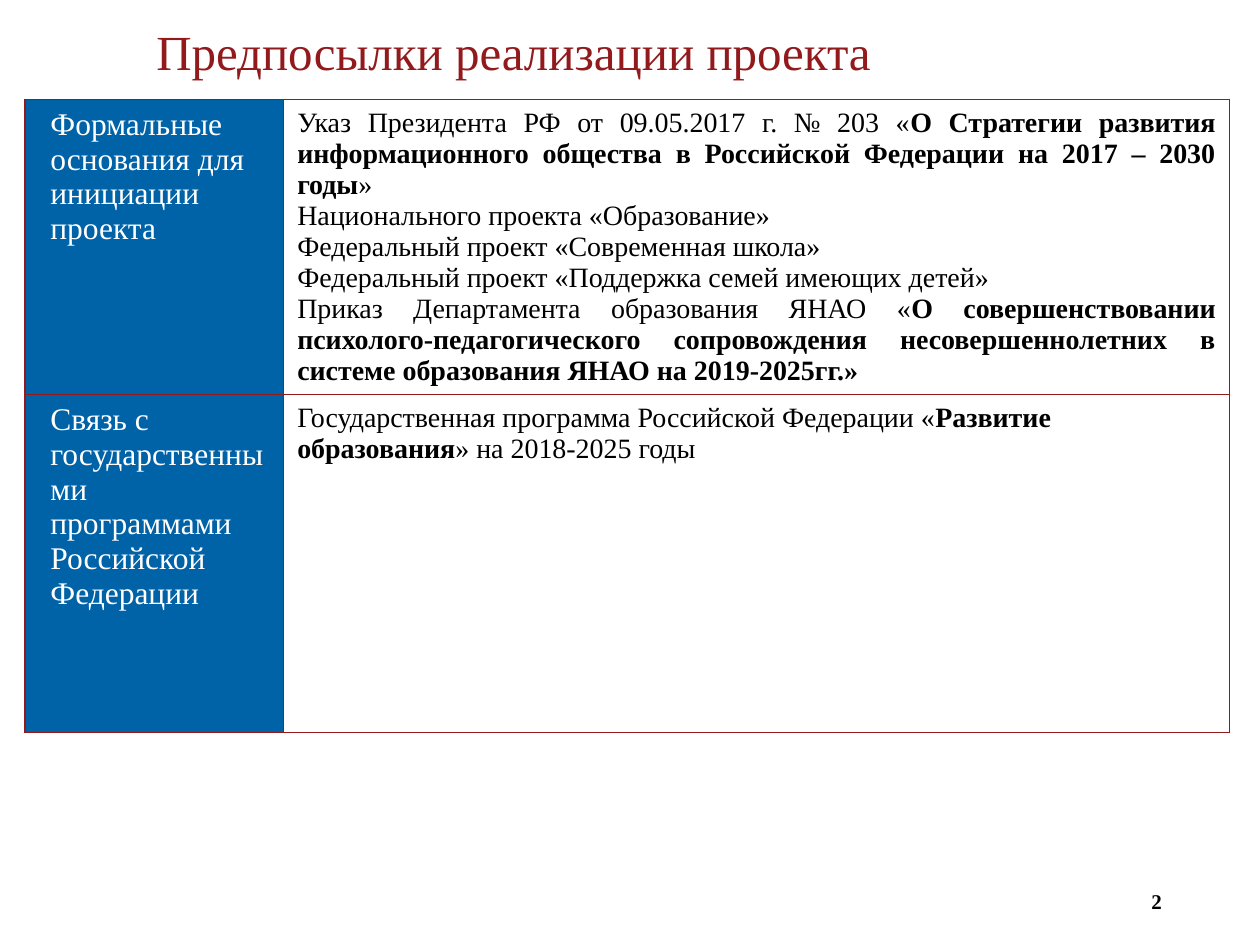
"""Build the slide on the grounds for the project."""
from lxml import etree
from pptx import Presentation
from pptx.dml.color import RGBColor
from pptx.enum import text
from pptx.oxml import ns
from pptx.util import Inches, Pt

COLORS = {"red": "921A1D", "blue": "0062A7", "white": "FFFFFF", "black": "000000"}
FONT = "Times New Roman"
TITLE = "Предпосылки реализации проекта"
PAGE_NUMBER = "2"
COLUMN_WIDTHS = (2.05, 7.51)
ROW_HEIGHTS = (2.17, 2.68)
# Each body paragraph alternates regular and bold runs, starting with regular.
ROWS = [
    {
        "label": "Формальные основания для инициации проекта",
        "align": text.PP_ALIGN.JUSTIFY,
        "body": [
            ("Указ Президента РФ от 09.05.2017 г. № 203 «",
             "О Стратегии развития информационного общества в Российской Федерации на 2017 – 2030 годы",
             "» "),
            ("Национального проекта «Образование» ",),
            ("Федеральный проект «Современная школа»",),
            ("Федеральный проект «Поддержка семей имеющих детей»",),
            ("Приказ Департамента образования ЯНАО «",
             "О совершенствовании психолого-педагогического сопровождения несовершеннолетних "
             "в системе образования ЯНАО на 2019-2025гг.»"),
        ],
    },
    {
        "label": "Связь с государственными программами Российской Федерации",
        "align": text.PP_ALIGN.LEFT,
        "body": [
            ("Государственная программа Российской Федерации «",
             "Развитие образования",
             "» на 2018-2025 годы"),
        ],
    },
]


def add_run(paragraph, content, size=16, color="black", bold=False):
    run = paragraph.add_run()
    run.text = content
    run.font.name = FONT
    run.font.size = Pt(size)
    run.font.bold = bold
    run.font.color.rgb = RGBColor.from_string(COLORS[color])


def set_borders(cell, color="red", width=1):
    properties = cell._tc.get_or_add_tcPr()
    for index, side in enumerate(("lnL", "lnR", "lnT", "lnB")):
        line = etree.Element(ns.qn(f"a:{side}"), w=str(Pt(width)))
        fill = etree.SubElement(line, ns.qn("a:solidFill"))
        etree.SubElement(fill, ns.qn("a:srgbClr"), val=COLORS[color])
        properties.insert(index, line)


def format_cell(cell, fill, left=0.11):
    cell.margin_left, cell.margin_right = Inches(left), Inches(0.11)
    cell.margin_top = cell.margin_bottom = Inches(0.06)
    cell.fill.solid()
    cell.fill.fore_color.rgb = RGBColor.from_string(COLORS[fill])
    set_borders(cell)


def add_title(slide):
    title = slide.shapes.title
    title.left, title.top, title.width, title.height = map(Inches, (0.85, 0.15, 7.62, 0.54))
    frame = title.text_frame
    frame.auto_size = text.MSO_AUTO_SIZE.NONE
    frame.vertical_anchor = text.MSO_ANCHOR.BOTTOM
    frame.margin_left = Inches(0.39)
    paragraph = frame.paragraphs[0]
    paragraph.alignment = text.PP_ALIGN.LEFT
    paragraph.line_spacing = 0.9
    add_run(paragraph, TITLE, size=28, color="red")


def add_grounds_table(slide):
    frame = slide.shapes.add_table(len(ROWS), 2, Inches(0.2), Inches(0.79),
                                   Inches(sum(COLUMN_WIDTHS)), Inches(sum(ROW_HEIGHTS)))
    table = frame.table
    for column, width in zip(table.columns, COLUMN_WIDTHS):
        column.width = Inches(width)
    for row, height, content in zip(table.rows, ROW_HEIGHTS, ROWS):
        row.height = Inches(height)
        label, body = row.cells
        format_cell(label, "blue", left=0.2)
        format_cell(body, "white")
        paragraph = label.text_frame.paragraphs[0]
        paragraph.space_before = Pt(6)
        add_run(paragraph, content["label"], size=18, color="white")
        for index, parts in enumerate(content["body"]):
            body_frame = body.text_frame
            paragraph = body_frame.add_paragraph() if index else body_frame.paragraphs[0]
            paragraph.alignment = content["align"]
            for position, part in enumerate(parts):
                add_run(paragraph, part, bold=position % 2 == 1)


def add_page_number(slide):
    box = slide.shapes.add_textbox(*map(Inches, (7.07, 6.95, 2.25, 0.4)))
    box.text_frame.word_wrap = True
    box.text_frame.vertical_anchor = text.MSO_ANCHOR.MIDDLE
    paragraph = box.text_frame.paragraphs[0]
    paragraph.alignment = text.PP_ALIGN.RIGHT
    add_run(paragraph, PAGE_NUMBER, size=12, bold=True)


def main():
    presentation = Presentation()
    presentation.slide_width, presentation.slide_height = Inches(10), Inches(7.5)
    slide = presentation.slides.add_slide(presentation.slide_layouts[5])
    add_title(slide)
    add_grounds_table(slide)
    add_page_number(slide)
    presentation.save("out.pptx")


if __name__ == "__main__":
    main()
